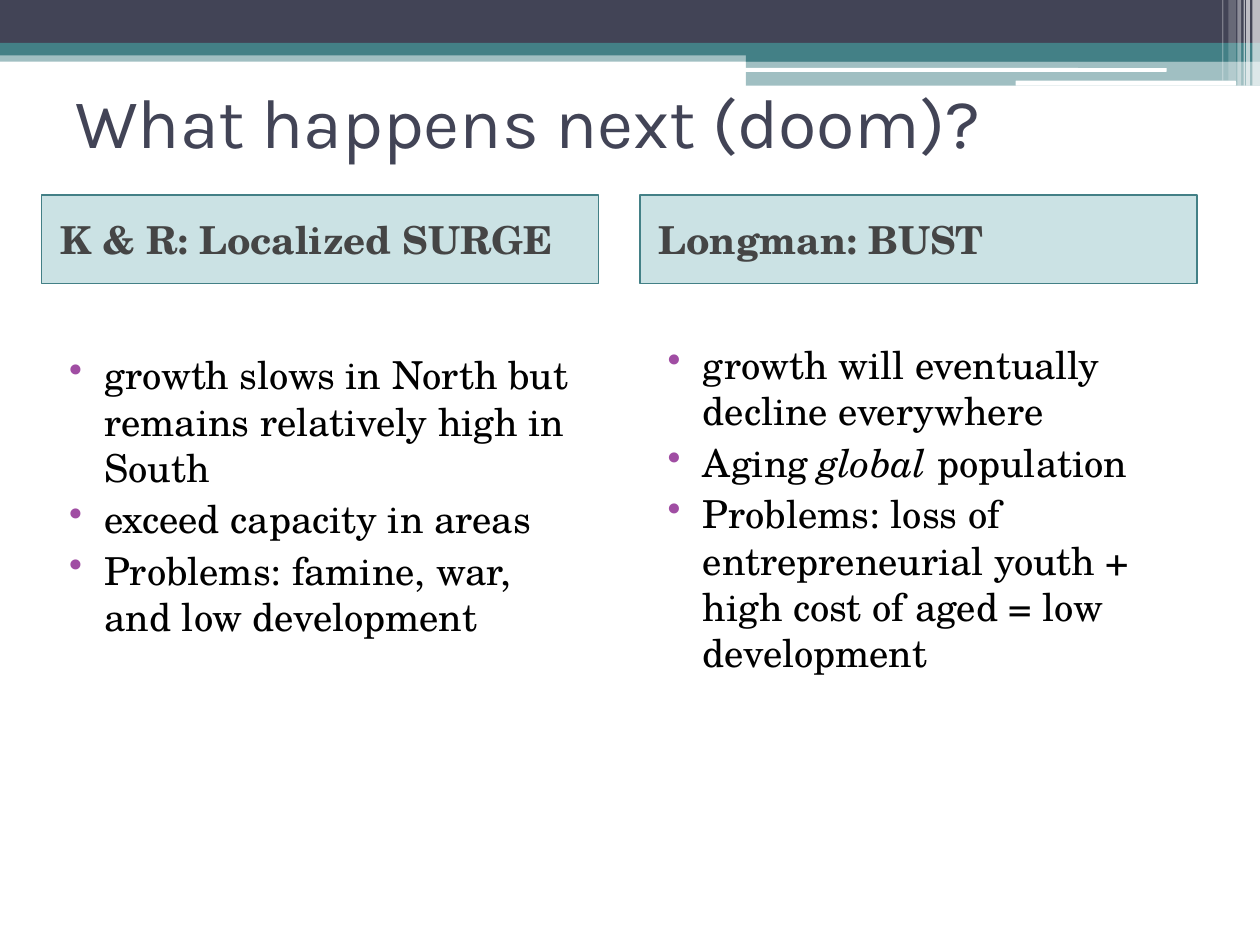
from lxml import etree
from pptx import Presentation
from pptx.dml.color import RGBColor
from pptx.enum.shapes import MSO_SHAPE as Shape
from pptx.enum.text import MSO_ANCHOR as Anchor, PP_ALIGN as Align
from pptx.oxml.ns import qn
from pptx.util import Inches, Pt

COLORS = {
    "navy": "424456", "teal": "438086", "panel": "328E97", "white": "FFFFFF",
    "heading": "454545", "body": "000000", "bullet": "A04DA3",
}
TITLE = {"name": "Karla", "size": Pt(40)}
HEADING = {"name": "TeX Gyre Schola", "size": Pt(22), "bold": True}
BODY = {"name": "TeX Gyre Schola", "size": Pt(22)}


def rgb(key):
    return RGBColor.from_string(COLORS[key])


def add_block(s, box, color, alpha=100, kind=Shape.RECTANGLE):
    sp = s.shapes.add_shape(kind, *map(Inches, box))
    sp.shadow.inherit = False
    sp.fill.solid()
    sp.fill.fore_color.rgb = rgb(color)
    sp.line.fill.background()
    if alpha < 100:
        clr = sp.fill._xPr.find(qn("a:solidFill"))[0]
        etree.SubElement(clr, qn("a:alpha"), val=str(alpha * 1000))
    return sp


def add_run(p, text, fmt, color):
    r = p.add_run()
    r.text = text
    for name, value in fmt.items():
        setattr(r.font, name, value)
    r.font.color.rgb = rgb(color)


def set_paragraph(p, margin, indent=0, bullet=False):
    p.alignment = Align.LEFT
    p.space_before = Pt(3)
    pPr = p._p.get_or_add_pPr()
    pPr.set("marL", str(Inches(margin)))
    pPr.set("indent", str(Inches(indent)))
    if bullet:
        clr = etree.SubElement(pPr, qn("a:buClr"))
        etree.SubElement(clr, qn("a:srgbClr"), val=COLORS["bullet"])
        etree.SubElement(pPr, qn("a:buChar"), char="•")


def add_banner(s, left, top, width):
    right = left + width
    tab = right - 4.08
    for x, y, height, color, alpha in [
        (left, 0.4, 0.09, "teal", 50),
        (left, 0, 0.34, "navy", 100),
        (left, 0.34, 0.1, "teal", 100),
        (tab, 0.39, 0.1, "teal", 100),
        (tab, 0.48, 0.2, "teal", 50),
    ]:
        add_block(s, (x, top + y, right - x, height), color, alpha)
    for x, y, w, h in [(4.09, 0.54, 3.35, 0.03), (1.94, 0.64, 1.75, 0.04)]:
        add_block(s, (right - x, top + y, w, h), "white",
                  kind=Shape.ROUNDED_RECTANGLE)
    for x, w, h, alpha in [
        (0.06, 0.06, 0.68, 65), (0.11, 0.03, 0.68, 65),
        (0.13, 0.01, 0.68, 60), (0.18, 0.03, 0.68, 40),
        (0.25, 0.06, 0.64, 20), (0.3, 0.01, 0.64, 30),
    ]:
        add_block(s, (right - x, top, w, h), "white", alpha)


def add_title(s, box, text):
    tf = s.shapes.add_textbox(*map(Inches, box)).text_frame
    tf.word_wrap = True
    tf.vertical_anchor = Anchor.MIDDLE
    add_run(tf.paragraphs[0], text, TITLE, "navy")


def add_heading(s, box, text):
    sp = add_block(s, box, "panel", 25)
    sp.line.color.rgb = rgb("teal")
    sp.line.width = Pt(1)
    tf = sp.text_frame
    tf.word_wrap = True
    tf.vertical_anchor = Anchor.MIDDLE
    p = tf.paragraphs[0]
    set_paragraph(p, 0.05)
    add_run(p, text, HEADING, "heading")


def add_bullets(s, box, items):
    tf = s.shapes.add_textbox(*map(Inches, box)).text_frame
    tf.word_wrap = True
    for i, runs in enumerate(items):
        p = tf.add_paragraph() if i else tf.paragraphs[0]
        set_paragraph(p, 0.4, -0.28, bullet=True)
        for text, italic in runs:
            add_run(p, text, {**BODY, "italic": italic}, "body")


def add_column(s, left, width, heading, list_top, items):
    add_heading(s, (left, 1.55, width, 0.7), heading)
    add_bullets(s, (left, list_top, width, 4.34), items)


def main():
    prs = Presentation()
    prs.slide_width, prs.slide_height = Inches(10), Inches(7.5)
    s = prs.slides.add_slide(prs.slide_layouts[6])
    add_banner(s, 0, 0, 10)
    add_title(s, (0.5, 0.33, 9, 1.25), "What happens next (doom)?")
    add_column(s, 0.33, 4.42, "K & R: Localized SURGE", 2.74, [
        [("growth slows in North but remains relatively high in South", False)],
        [("exceed capacity in areas", False)],
        [("Problems: famine, war, and low development", False)],
    ])
    add_column(s, 5.08, 4.42, "Longman: BUST", 2.66, [
        [("growth will eventually decline everywhere", False)],
        [("Aging ", False), ("global", True), (" population", False)],
        [("Problems: loss of entrepreneurial youth + high cost of aged"
          " = low development", False)],
    ])
    prs.save("out.pptx")


if __name__ == "__main__":
    main()
